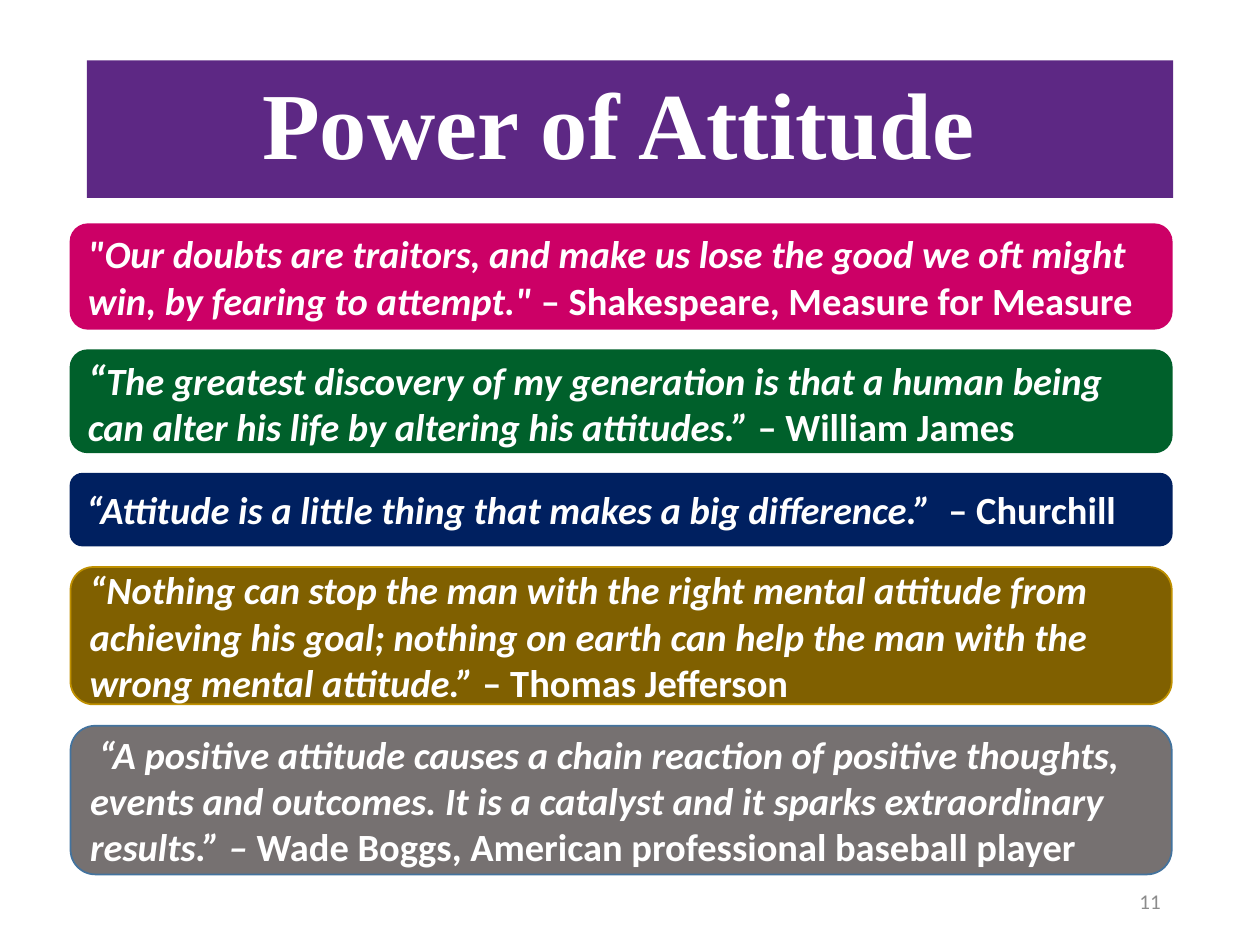
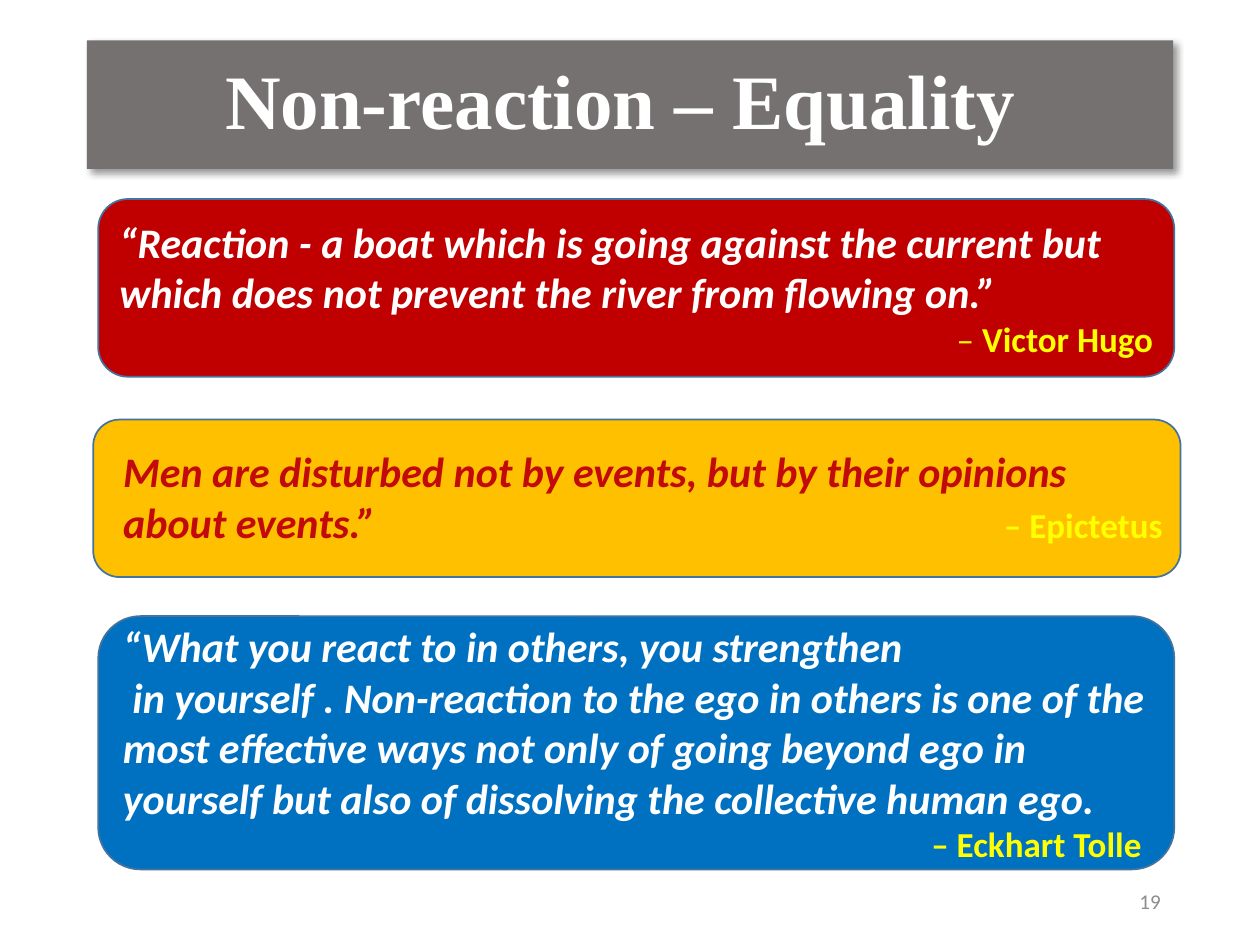
from lxml import etree
from pptx import Presentation
from pptx.dml.color import RGBColor
from pptx.enum.shapes import MSO_SHAPE as SHAPE
from pptx.enum.text import MSO_ANCHOR as ANCHOR, PP_ALIGN as ALIGN
from pptx.oxml.ns import qn
from pptx.util import Inches, Pt

COLORS = {
    "white": "FFFFFF", "yellow": "FFFF00", "purple": "5D2884", "pink": "CC0066",
    "green": "00602B", "navy": "002060", "olive": "806000", "gold": "BF9000",
    "gray": "767171", "edge": "43739E", "red": "C00000", "amber": "FFC000",
    "blue": "0070C0", "crimson": "C20A0A", "number": "8C8C8C", "black": "000000",
}

# Text styles: font, size, colour, bold, italic
STYLES = {
    "quote": ("Calibri", 22, "white", True, True),
    "mark": ("Calibri", 24, "white", True, True),
    "author": ("Calibri", 22, "white", True, False),
    "saying": ("Calibri", 24, "white", True, True),
    "red saying": ("Calibri", 24, "crimson", True, True),
    "credit": ("Calibri", 20, "yellow", True, False),
    "dash": ("Calibri", 20, "yellow", False, False),
    "number": ("Calibri", 12, "number", False, False),
}

# Slide 1 cards: height, fill, line, runs
ATTITUDE_CARDS = [
    (0.83, "pink", "pink", [
        ('"Our doubts are traitors, and make us lose the good we oft might win, '
         'by fearing to attempt." ', "quote"),
        ("– Shakespeare, Measure for Measure", "author")]),
    (0.81, "green", "green", [
        ("“", "mark"),
        ("The greatest discovery of my generation is that a human being can alter "
         "his life by altering his attitudes.” ", "quote"),
        ("– William James", "author")]),
    (0.57, "navy", "navy", [
        ("“Attitude is a little thing that makes a big difference.”  ", "quote"),
        ("– Churchill", "author")]),
    (1.09, "olive", "gold", [
        ("“Nothing can stop the man with the right mental attitude from achieving "
         "his goal; nothing on earth can help the man with the wrong mental "
         "attitude.” ", "quote"),
        ("– Thomas Jefferson", "author")]),
    (1.18, "gray", "edge", [
        (" “A positive attitude causes a chain reaction of positive thoughts, events "
         "and outcomes. It is a catalyst and it sparks extraordinary results.” – ",
         "quote"),
        ("Wade Boggs, American professional baseball player", "author")]),
]
CARD_TOP, CARD_GAP = 1.78, 0.17

# Slide 2 cards: top, height, fill, saying, credit runs
EQUALITY_CARDS = [
    (1.58, 1.41, "red",
     "“Reaction - a boat which is going against the current but which does not "
     "prevent the river from flowing on.”",
     [("– ", "dash"), ("Victor Hugo", "credit")]),
    (4.89, 2.01, "blue",
     "“What you react to in others, you strengthen\n in yourself . Non-reaction to "
     "the ego in others is one of the most effective ways not only of going beyond "
     "ego in yourself but also of dissolving the collective human ego.",
     [("– Eckhart Tolle ", "credit")]),
]
EPICTETUS = [
    ("Men are disturbed not by events, but by their opinions about events.”\t",
     "red saying"),
    ("– Epictetus", "credit"),
]


def rgb(name):
    return RGBColor.from_string(COLORS[name])


def box(left, top, width, height):
    return [Inches(v) for v in (left, top, width, height)]


def add_run(p, text, font, size, color, bold, italic):
    r = p.add_run()
    r.text = text
    f = r.font
    f.name, f.size, f.bold, f.italic = font, Pt(size), bold, italic
    f.color.rgb = rgb(color)


def write(tf, paragraphs, anchor=ANCHOR.MIDDLE):
    """Fill a text frame from (alignment, [(text, style)]) pairs."""
    tf.word_wrap = True
    tf.vertical_anchor = anchor
    for i, (align, runs) in enumerate(paragraphs):
        p = tf.paragraphs[0] if i == 0 else tf.add_paragraph()
        p.alignment = align
        for text, style in runs:
            for j, line in enumerate(text.split("\n")):
                if j:
                    p.add_line_break()
                add_run(p, line, *STYLES[style])


def add_card(s, place, fill, line, paragraphs=(),
             kind=SHAPE.FLOWCHART_ALTERNATE_PROCESS):
    sp = s.shapes.add_shape(kind, *box(*place))
    sp.shadow.inherit = False
    sp.fill.solid()
    sp.fill.fore_color.rgb = rgb(fill)
    sp.line.color.rgb = rgb(line)
    sp.line.width = Pt(1)
    write(sp.text_frame, paragraphs)


def add_text(s, place, paragraphs, anchor):
    tf = s.shapes.add_textbox(*box(*place)).text_frame
    write(tf, paragraphs, anchor)
    return tf


def add_shadow(sp):
    effects = etree.SubElement(sp.element.spPr, qn("a:effectLst"))
    shadow = etree.SubElement(effects, qn("a:outerShdw"), blurRad=str(Pt(4)),
                              dist=str(Pt(3)), dir=str(45 * 60000),
                              algn="tl", rotWithShape="0")
    color = etree.SubElement(shadow, qn("a:srgbClr"), val=COLORS["black"])
    etree.SubElement(color, qn("a:alpha"), val="40000")


def add_right_tab(p, inches):
    tabs = etree.SubElement(p._p.get_or_add_pPr(), qn("a:tabLst"))
    etree.SubElement(tabs, qn("a:tab"), pos=str(Inches(inches)), algn="r")


def new_slide(prs, title, size, top, height, fill, number):
    """Add a slide with its title band and page number."""
    s = prs.slides.add_slide(prs.slide_layouts[5])
    sp = s.shapes.title
    sp.left, sp.top, sp.width, sp.height = box(0.69, top, 8.62, height)
    sp.fill.solid()
    sp.fill.fore_color.rgb = rgb(fill)
    tf = sp.text_frame
    tf.vertical_anchor = ANCHOR.MIDDLE
    p = tf.paragraphs[0]
    p.alignment, p.line_spacing = ALIGN.CENTER, 0.9
    add_run(p, title, "Times New Roman", size, "white", True, False)
    add_text(s, (7.06, 6.95, 2.25, 0.4), [(ALIGN.RIGHT, [(number, "number")])],
             ANCHOR.MIDDLE)
    return s


def main():
    prs = Presentation()
    prs.slide_width, prs.slide_height = Inches(10), Inches(7.5)

    # Power of Attitude: equal gaps between cards
    s = new_slide(prs, "Power of Attitude ", 54, 0.48, 1.09, "purple", "11")
    top = CARD_TOP
    for height, fill, line, runs in ATTITUDE_CARDS:
        add_card(s, (0.56, top, 8.74, height), fill, line, [(ALIGN.LEFT, runs)])
        top += height + CARD_GAP

    # Non-reaction: saying on the left, credit on the right
    s = new_slide(prs, "Non-reaction – Equality ", 44, 0.32, 1.02, "gray", "19")
    add_shadow(s.shapes.title)
    for top, height, fill, saying, credit in EQUALITY_CARDS:
        add_card(s, (0.78, top, 8.54, height), fill, "edge",
                 [(ALIGN.LEFT, [(saying, "saying")]), (ALIGN.RIGHT, credit)])
    add_card(s, (0.74, 3.33, 8.63, 1.25), "amber", "edge",
             kind=SHAPE.ROUNDED_RECTANGLE)
    tf = add_text(s, (0.88, 3.49, 8.56, 0.91), [(ALIGN.LEFT, EPICTETUS)], ANCHOR.TOP)
    add_right_tab(tf.paragraphs[0], 8.25)

    prs.save("out.pptx")


if __name__ == "__main__":
    main()
